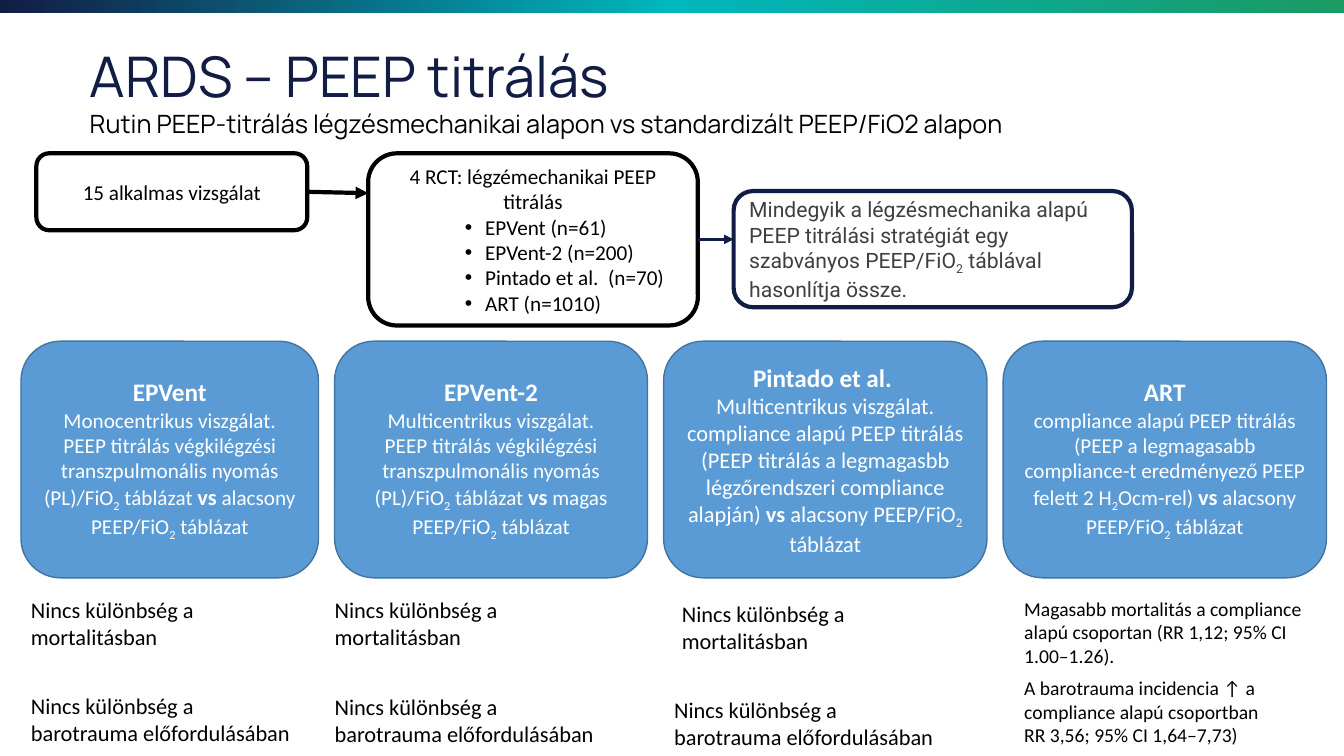
"""Build the slide on PEEP titration trials in ARDS."""
from copy import deepcopy
from dataclasses import dataclass
from typing import NamedTuple, Optional

from lxml import etree
from pptx import Presentation
from pptx.dml.color import RGBColor
from pptx.enum.dml import MSO_LINE
from pptx.enum.shapes import MSO_CONNECTOR, MSO_SHAPE
from pptx.enum.text import MSO_ANCHOR, MSO_AUTO_SIZE, PP_ALIGN
from pptx.oxml.ns import qn
from pptx.util import Pt

RECT, ROUND = MSO_SHAPE.RECTANGLE, MSO_SHAPE.ROUNDED_RECTANGLE
STRAIGHT, SOLID = MSO_CONNECTOR.STRAIGHT, MSO_LINE.SOLID
TOP, MIDDLE = MSO_ANCHOR.TOP, MSO_ANCHOR.MIDDLE
LEFT, CENTER = PP_ALIGN.LEFT, PP_ALIGN.CENTER
FIXED = MSO_AUTO_SIZE.NONE
COLORS = {
    "navy": "121D46", "teal": "00B7BD", "green": "1B9A63", "black": "000000",
    "white": "FFFFFF", "gray": "3C4043", "blue": "5B9BD5", "edge": "43739E",
}


class Run(NamedTuple):
    text: str
    size: Optional[float] = None
    bold: bool = False
    sub: bool = False


class Para(NamedTuple):
    runs: tuple
    align: int = LEFT
    bullet: bool = False


class Style(NamedTuple):
    size: float
    font: str = "Calibri"
    color: str = "black"


class Frame(NamedTuple):
    line: str
    weight: float
    fill: Optional[str] = None


@dataclass
class Box:
    place: tuple
    paras: list
    style: Style
    frame: Optional[Frame] = None


@dataclass
class Arrow:
    start: tuple
    end: tuple
    color: str
    weight: float


def tint(name: str) -> RGBColor:
    return RGBColor.from_string(COLORS[name])


def plain(text: str, align: int = LEFT, bullet: bool = False) -> Para:
    return Para((Run(text),), align, bullet)


def write(frame, paras: list, style: Style) -> None:
    for i, para in enumerate(paras):
        line = frame.paragraphs[0] if i == 0 else frame.add_paragraph()
        line.alignment = para.align
        if para.bullet:
            props = line._p.get_or_add_pPr()
            props.set("marL", str(Pt(70.5)))
            props.set("indent", str(-Pt(14.5)))
            etree.SubElement(props, qn("a:buFont"), typeface="Arial")
            etree.SubElement(props, qn("a:buChar"), char="•")
        for part in para.runs:
            run = line.add_run()
            run.text = part.text
            run.font.name = style.font
            run.font.size = Pt(part.size or style.size)
            run.font.bold = part.bold
            run.font.color.rgb = tint(style.color)
            if part.sub:
                run._r.get_or_add_rPr().set("baseline", "-25000")


def draw_box(slide, box: Box) -> None:
    place = [Pt(n) for n in box.place]
    if box.frame:
        shape = slide.shapes.add_shape(ROUND, *place)
        shape.shadow.inherit = False
        shape.line.color.rgb = tint(box.frame.line)
        shape.line.width = Pt(box.frame.weight)
        if box.frame.fill:
            shape.fill.solid()
            shape.fill.fore_color.rgb = tint(box.frame.fill)
        else:
            shape.fill.background()
    else:
        shape = slide.shapes.add_textbox(*place)
    text = shape.text_frame
    text.word_wrap = True
    text.vertical_anchor = MIDDLE if box.frame else TOP
    write(text, box.paras, box.style)


def draw_arrow(slide, arrow: Arrow) -> None:
    ends = [Pt(n) for n in arrow.start + arrow.end]
    link = slide.shapes.add_connector(STRAIGHT, *ends)
    link.line.color.rgb = tint(arrow.color)
    link.line.width = Pt(arrow.weight)
    link.line.dash_style = SOLID
    etree.SubElement(link.line._get_or_add_ln(), qn("a:tailEnd"), type="triangle")
    etree.SubElement(link._element.spPr, qn("a:effectLst"))


def draw_bar(slide) -> None:
    bar = slide.shapes.add_shape(RECT, 0, 0, Pt(960), Pt(9.4))
    bar.shadow.inherit = False
    bar.line.fill.background()
    bar.fill.gradient()
    bar.fill.gradient_angle = 0
    stops = bar._element.spPr.find(qn("a:gradFill")).find(qn("a:gsLst"))
    stops.append(deepcopy(stops[0]))
    names = ("navy", "teal", "green")
    for i, (stop, name) in enumerate(zip(bar.fill.gradient_stops, names)):
        stop.color.rgb = tint(name)
        stop.position = i / 2


def draw_title(slide, text: str) -> None:
    title = slide.shapes.title
    title.left, title.top, title.width, title.height = map(Pt, (57, 26, 847, 47.5))
    frame = title.text_frame
    frame.auto_size = FIXED
    frame.vertical_anchor = TOP
    write(frame, [plain(text)], Style(40, "Manrope", "navy"))


TWO = Run("2", sub=True)
TABLE = (TWO, Run(" táblázat"))
VS = Run("vs", 16, True)
LOW = Run(" alacsony PEEP/FiO")
MULTI = "Multicentrikus viszgálat."
LUNG = (Run("PEEP titrálás végkilégzési transzpulmonális nyomás (PL)/FiO"),
        TWO, Run(" táblázat "), VS)
CARDS = [
    (15, 212.5, 15.1, "EPVent", "Monocentrikus viszgálat.", LUNG + (LOW,) + TABLE),
    (239, 223.5, 15.1, "EPVent-2", MULTI, LUNG + (Run(" magas PEEP/FiO"),) + TABLE),
    (474, 231, 16, "Pintado et al. ", MULTI,
     (Run("compliance alapú PEEP titrálás (PEEP titrálás a legmagasbb "
          "légzőrendszeri compliance alapján) "), VS, LOW) + TABLE),
    (716.5, 231, 15.1, "ART", "",
     (Run("compliance alapú PEEP titrálás (PEEP a legmagasabb compliance-t "
          "eredményező PEEP felett 2 H"), TWO, Run("Ocm-rel) "), VS, LOW) + TABLE),
]
DEATH = ["Nincs különbség a mortalitásban"]
TRAUMA = ["Nincs különbség a barotrauma előfordulásában"]
NOTES = [
    ((15, 422.5, 212.5, 46), 16, DEATH),
    ((232, 422.5, 223, 46), 16, DEATH),
    ((480, 425, 212.5, 46), 16, DEATH),
    ((724.5, 422.5, 231, 58), 14,
     ["Magasabb mortalitás a compliance alapú csoportan (RR 1,12; 95% CI 1.00–1.26)."]),
    ((15, 491, 204.5, 46), 16, TRAUMA),
    ((232, 491.5, 204.5, 46), 16, TRAUMA),
    ((474.5, 494, 204.5, 46), 16, TRAUMA),
    ((724.5, 479.5, 235.5, 58), 14,
     ["A barotrauma incidencia ↑ a compliance alapú csoportban",
      "RR 3,56; 95% CI 1,64–7,73)"]),
]
TRIALS = ["EPVent (n=61)", "EPVent-2 (n=200)", "Pintado et al.  (n=70)", "ART (n=1010)"]
FLOW = [
    Box((57, 73.5, 758, 29), [plain(
        "Rutin PEEP-titrálás légzésmechanikai alapon vs standardizált PEEP/FiO2 alapon")],
        Style(18, "Manrope")),
    Box((26, 109.5, 193.5, 55), [plain("15 alkalmas vizsgálat", CENTER)],
        Style(15.1), Frame("black", 3)),
    Box((263, 109.5, 235.5, 123),
        [plain("4 RCT: légzémechanikai PEEP titrálás", CENTER)]
        + [plain(trial, bullet=True) for trial in TRIALS],
        Style(15.1), Frame("black", 3)),
    Box((524, 136.5, 284.5, 83), [Para((
        Run("Mindegyik a légzésmechanika alapú PEEP titrálási stratégiát egy "
            "szabványos PEEP/FiO"), TWO, Run(" táblával hasonlítja össze.")))],
        Style(15.1, "Roboto", "gray"), Frame("navy", 3)),
]
ARROWS = [
    Arrow((219.5, 137), (263, 138), "black", 3),
    Arrow((498.5, 171), (524, 171), "navy", 2.25),
]


def main() -> None:
    deck = Presentation()
    deck.slide_width, deck.slide_height = Pt(960), Pt(540)
    slide = deck.slides.add_slide(deck.slide_layouts[5])
    draw_bar(slide)
    draw_title(slide, "ARDS – PEEP titrálás")
    for box in FLOW:
        draw_box(slide, box)
    for arrow in ARROWS:
        draw_arrow(slide, arrow)
    for left, width, size, name, site, body in CARDS:
        paras = [Para((Run(name, 18, True),), CENTER)]
        if site:
            paras.append(plain(site, CENTER))
        paras.append(Para(body, CENTER))
        draw_box(slide, Box((left, 243.75, width, 169), paras,
                            Style(size, color="white"), Frame("edge", 1, "blue")))
    for place, size, lines in NOTES:
        draw_box(slide, Box(place, [plain(line) for line in lines], Style(size)))
    deck.save("out.pptx")


if __name__ == "__main__":
    main()
